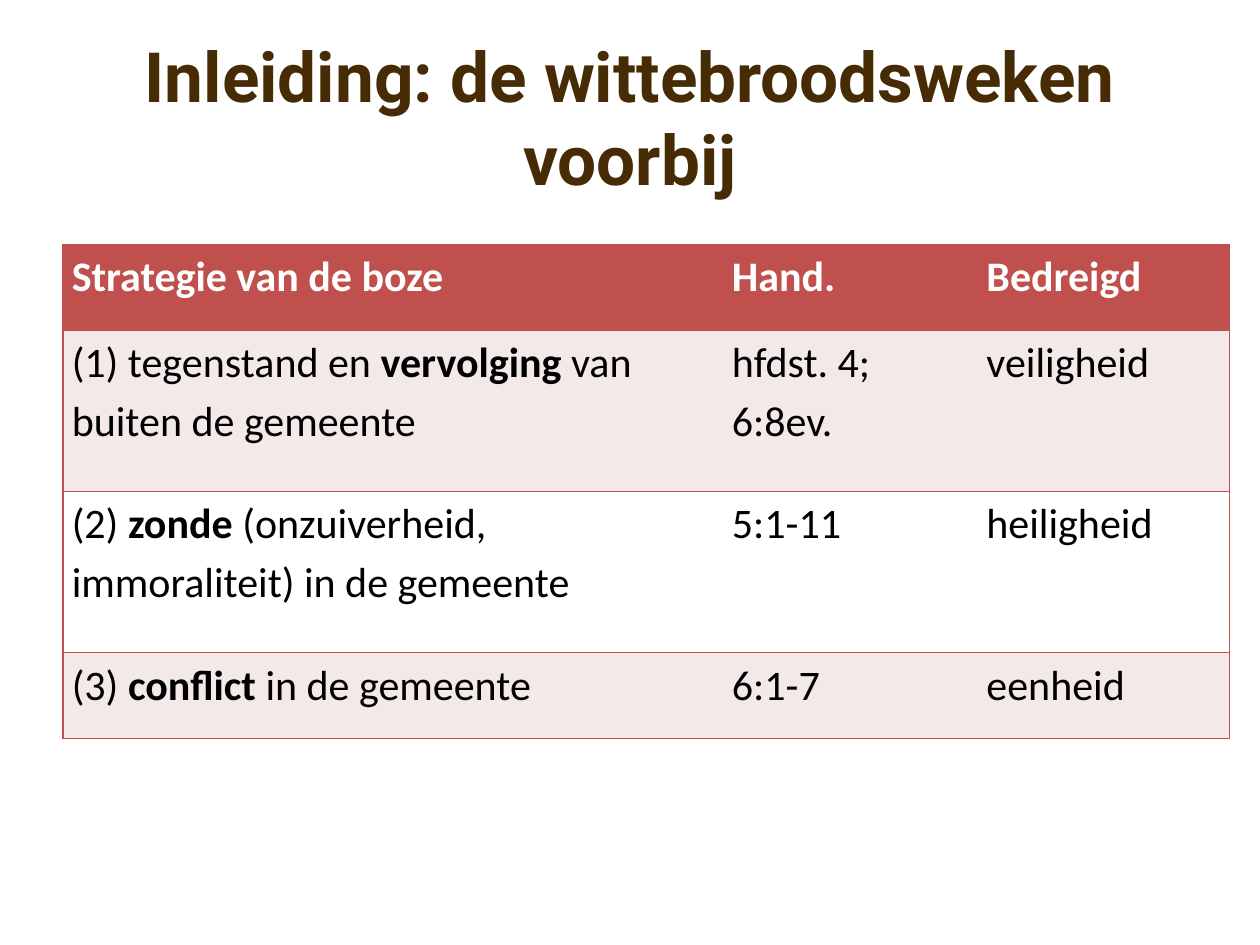
"""Build the slide with a title and a table of three threats to the church."""
from dataclasses import dataclass

from lxml.etree import SubElement
from pptx import Presentation
from pptx.dml.color import RGBColor
from pptx.enum.text import MSO_ANCHOR, PP_ALIGN
from pptx.oxml.ns import qn
from pptx.util import Inches, Pt

RED = RGBColor(0xC0, 0x50, 0x4D)
PINK = RGBColor(0xF4, 0xE9, 0xE9)
WHITE = RGBColor(0xFF, 0xFF, 0xFF)
BLACK = RGBColor(0, 0, 0)
BROWN = RGBColor(0x47, 0x2B, 0x05)
NO_GRID_STYLE = "{2D5ABB26-0587-4C30-8999-92F81FD0307C}"
COLUMNS = (5.24, 2.02, 2)
MARGIN = 0.05


@dataclass(frozen=True)
class Row:
    """A table row; text between asterisks is bold."""

    cells: tuple[str, str, str]
    lines: int
    fill: RGBColor
    color: RGBColor = BLACK
    bold: bool = False

    @property
    def height(self) -> float:
        """Return the row height in inches."""
        return 0.08 + 0.6 * self.lines


ROWS = (
    Row(("Strategie van de boze", "Hand.", "Bedreigd"), 1, RED, WHITE, True),
    Row(("(1) tegenstand en *vervolging *van buiten de gemeente",
         "hfdst. 4; 6:8ev.", "veiligheid"), 2, PINK),
    Row(("(2) *zonde *(onzuiverheid, immoraliteit) in de gemeente",
         "5:1-11", "heiligheid"), 2, WHITE),
    Row(("(3) *conflict* in de gemeente", "6:1-7", "eenheid"), 1, PINK),
)


def write(tf, text: str, *, size: float, font: str, color: RGBColor,
          bold: bool = False, align=PP_ALIGN.LEFT, spacing: float = 1.0) -> None:
    """Write one paragraph, with text between asterisks in bold."""
    p = tf.paragraphs[0]
    p.alignment, p.line_spacing = align, spacing
    for i, part in enumerate(text.split("*")):
        r = p.add_run()
        r.text = part
        r.font.size, r.font.name = Pt(size), font
        r.font.bold = bold or i % 2 == 1
        r.font.color.rgb = color


def add_border(cell, sides: str) -> None:
    """Draw a red line on the given sides, in the order L, R, T, B."""
    tc_pr = cell._tc.get_or_add_tcPr()
    for side in sides:
        ln = SubElement(tc_pr, qn(f"a:ln{side}"), w=str(Pt(1)))
        fill = SubElement(ln, qn("a:solidFill"))
        SubElement(fill, qn("a:srgbClr"), val=str(RED))


def add_title(s, prs, text: str) -> None:
    """Add the centred title across the slide."""
    w, h = prs.slide_width, prs.slide_height
    sp = s.shapes.add_textbox(int(w * MARGIN), int(h * 0.04),
                              int(w * (1 - 2 * MARGIN)), Inches(1.25))
    tf = sp.text_frame
    tf.word_wrap, tf.vertical_anchor = True, MSO_ANCHOR.MIDDLE
    write(tf, text, size=39.6, font="Roboto", color=BROWN, bold=True,
          align=PP_ALIGN.CENTER)


def add_threats(s, prs, rows: tuple[Row, ...]) -> None:
    """Add the table with its rows, fills and borders."""
    frame = s.shapes.add_table(
        len(rows), len(COLUMNS), int(prs.slide_width * MARGIN), Inches(1.94),
        Inches(sum(COLUMNS)), Inches(sum(row.height for row in rows)))
    table = frame.table
    table.first_row = table.horz_banding = False
    table._tbl.tblPr.find(qn("a:tableStyleId")).text = NO_GRID_STYLE
    for column, width in zip(table.columns, COLUMNS):
        column.width = Inches(width)
    for i, row in enumerate(rows):
        table.rows[i].height = Inches(row.height)
        for j, text in enumerate(row.cells):
            cell = table.cell(i, j)
            cell.margin_left = cell.margin_right = Inches(0.07)
            cell.margin_top = cell.margin_bottom = 0
            add_border(cell, ("LTB", "TB", "RTB")[j])
            cell.fill.solid()
            cell.fill.fore_color.rgb = row.fill
            write(cell.text_frame, text, size=24, font="Calibri",
                  color=row.color, bold=row.bold, spacing=1.15)


def main() -> None:
    """Build and save the presentation."""
    prs = Presentation()
    prs.slide_width, prs.slide_height = Inches(10), Inches(7.5)
    s = prs.slides.add_slide(prs.slide_layouts[6])
    add_title(s, prs, "Inleiding: de wittebroodsweken voorbij")
    add_threats(s, prs, ROWS)
    prs.save("out.pptx")


if __name__ == "__main__":
    main()
